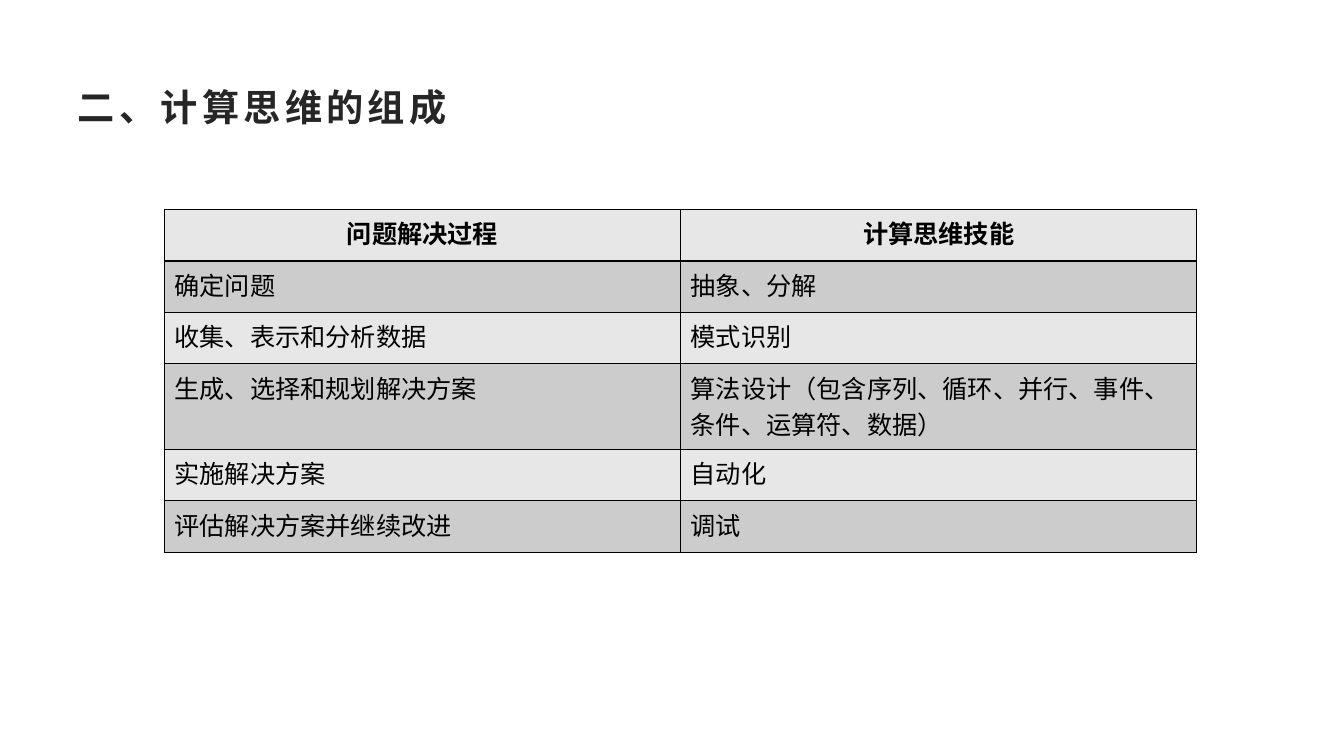
from dataclasses import dataclass

import pptx
import pptx.dml.color
import pptx.enum.lang
import pptx.enum.text
import pptx.oxml.ns
import pptx.util
from lxml import etree

Inches = pptx.util.Inches
Align = pptx.enum.text.PP_ALIGN
Anchor = pptx.enum.text.MSO_ANCHOR


@dataclass(frozen=True)
class Theme:
    font: str = "Arial"
    title_size: float = 26.6
    table_size: float = 18
    title_color: str = "262626"
    text_color: str = "000000"
    border_color: str = "000000"
    border_width: float = 1
    bands: tuple[str, str] = ("E7E7E7", "CCCCCC")


@dataclass(frozen=True)
class Step:
    process: str
    skill: str
    height: float = 0.51


THEME = Theme()
HEADER = Step("问题解决过程", "计算思维技能")
STEPS = [
    Step("确定问题", "抽象、分解"),
    Step("收集、表示和分析数据", "模式识别"),
    Step("生成、选择和规划解决方案",
         "算法设计（包含序列、循环、并行、事件、条件、运算符、数据）", 0.85),
    Step("实施解决方案", "自动化"),
    Step("评估解决方案并继续改进", "调试"),
]


def write(tf, text: str, *, size: float, color: str, bold: bool = False,
          align=Align.LEFT, spacing: float = 0) -> None:
    """Fill a text frame with one formatted paragraph."""
    p = tf.paragraphs[0]
    p.alignment = align
    r = p.add_run()
    r.text = text
    r.font.name = THEME.font
    r.font.size = pptx.util.Pt(size)
    r.font.bold = bold
    r.font.color.rgb = pptx.dml.color.RGBColor.from_string(color)
    r.font.language_id = pptx.enum.lang.MSO_LANGUAGE_ID.SIMPLIFIED_CHINESE
    if spacing:
        r.font._element.set("spc", str(round(spacing * 100)))


def add_borders(cell) -> None:
    """Draw a solid line on all four sides of a cell."""
    qn = pptx.oxml.ns.qn
    tc_pr = cell._tc.get_or_add_tcPr()
    for side in ("a:lnL", "a:lnR", "a:lnT", "a:lnB"):
        ln = etree.SubElement(tc_pr, qn(side), w=str(pptx.util.Pt(THEME.border_width)))
        fill = etree.SubElement(ln, qn("a:solidFill"))
        etree.SubElement(fill, qn("a:srgbClr"), val=THEME.border_color)


def add_title(s, text: str) -> None:
    sp = s.shapes.title
    sp.left, sp.top = Inches(0.67), Inches(0.67)
    sp.width, sp.height = Inches(12), Inches(0.77)
    tf = sp.text_frame
    tf.auto_size = pptx.enum.text.MSO_AUTO_SIZE.NONE
    tf.vertical_anchor = Anchor.MIDDLE
    write(tf, text, size=THEME.title_size, color=THEME.title_color,
          bold=True, spacing=3)


def add_steps_table(s, rows: list[Step]) -> None:
    height = sum(row.height for row in rows)
    table = s.shapes.add_table(len(rows), 2, Inches(1.63), Inches(2.08),
                               Inches(10.24), Inches(height)).table
    for i, row in enumerate(rows):
        table.rows[i].height = Inches(row.height)
        is_header = i == 0
        for j, text in enumerate((row.process, row.skill)):
            cell = table.cell(i, j)
            add_borders(cell)
            cell.fill.solid()
            cell.fill.fore_color.rgb = pptx.dml.color.RGBColor.from_string(
                THEME.bands[i % 2])
            write(cell.text_frame, text, size=THEME.table_size,
                  color=THEME.text_color, bold=is_header,
                  align=Align.CENTER if is_header else Align.LEFT)


def main() -> None:
    prs = pptx.Presentation()
    prs.slide_width, prs.slide_height = Inches(13.33), Inches(7.5)
    s = prs.slides.add_slide(prs.slide_layouts.get_by_name("Title Only"))

    # Heading
    add_title(s, "二、计算思维的组成")

    # Problem-solving steps and the skills they use
    add_steps_table(s, [HEADER, *STEPS])

    prs.save("out.pptx")


if __name__ == "__main__":
    main()
